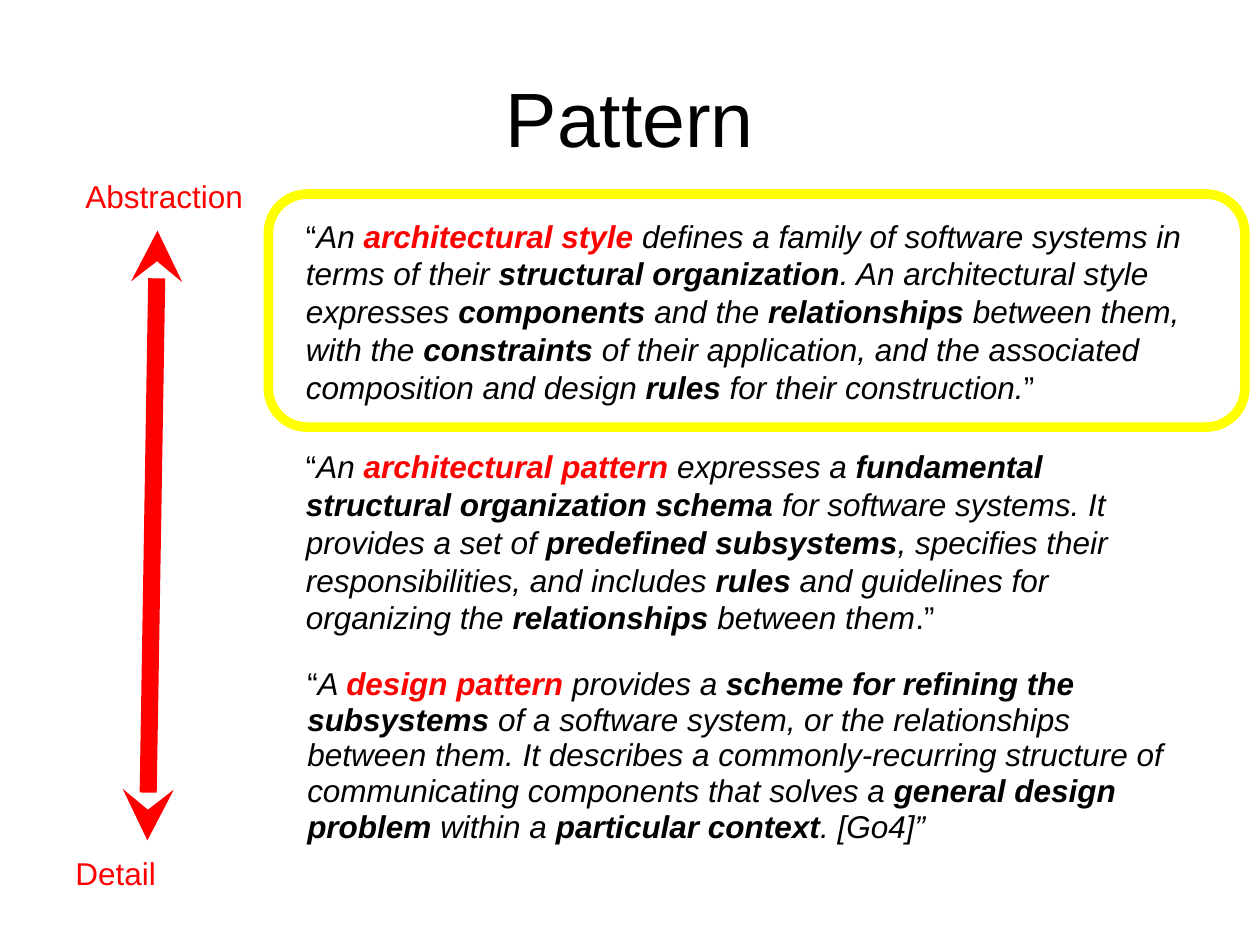
from lxml.etree import SubElement
from pptx import Presentation
from pptx.dml.color import RGBColor
from pptx.enum.shapes import MSO_CONNECTOR, MSO_SHAPE
from pptx.enum.text import MSO_ANCHOR, PP_ALIGN
from pptx.oxml.ns import qn
from pptx.util import Inches, Pt

COLORS = {"ink": "000000", "accent": "FF0000", "highlight": "FFFF00"}
FONT = "Arial"

STYLE = (
    "An |architectural style |defines a family of software systems in terms of their "
    "|structural organization|. An architectural style expresses |components| and the "
    "|relationships| between them, with the |constraints| of their application, and the "
    "associated composition and design |rules| for their construction."
)
ARCHITECTURE = (
    "An |architectural pattern |expresses a |fundamental structural organization schema| "
    "for software systems. It provides a set of |predefined subsystems|, specifies their "
    "responsibilities, and includes |rules| and guidelines for organizing the "
    "|relationships| between them"
)
DESIGN = (
    "A |design pattern |provides a |scheme for refining the subsystems| of a software "
    "system, or the relationships between them. It describes a commonly-recurring "
    "structure of communicating components that solves a |general design problem| within "
    "a |particular context|. [Go4]”"
)


def color(name):
    """Return the named colour of the palette."""
    return RGBColor.from_string(COLORS[name])


def add_span(para, text, size=18, ink="ink", bold=False, italic=False):
    """Append one formatted span to a paragraph."""
    span = para.add_run()
    span.text = text
    span.font.name = FONT
    span.font.size = Pt(size)
    span.font.bold = bold
    span.font.italic = italic
    span.font.color.rgb = color(ink)


def add_text(page, box, spans, align=PP_ALIGN.LEFT, anchor=MSO_ANCHOR.TOP, spacing=None):
    """Place one paragraph made of (text, format) spans in a box."""
    frame = page.shapes.add_textbox(*map(Inches, box)).text_frame
    frame.word_wrap = True
    frame.vertical_anchor = anchor
    para = frame.paragraphs[0]
    para.alignment = align
    if spacing:
        para.line_spacing = spacing
    for text, look in spans:
        add_span(para, text, **look)


def add_title(page, box, text):
    """Place the centred slide title."""
    add_text(page, box, [(text, {"size": 44})], PP_ALIGN.CENTER, MSO_ANCHOR.MIDDLE)


def add_definition(page, box, text, closing="", spacing=None):
    """Place a quoted definition whose odd segments are bold, the first one red."""
    spans = [("“", {})]
    for index, segment in enumerate(text.split("|")):
        ink = "accent" if index == 1 else "ink"
        spans.append((segment, {"ink": ink, "bold": index % 2 == 1, "italic": True}))
    if closing:
        spans.append((closing, {}))
    add_text(page, box, spans, spacing=spacing)


def add_scale(page, box, top_label, bottom_label):
    """Draw the double arrow between its two end labels."""
    left, top, width, height = box
    label = {"ink": "accent"}
    add_text(page, (left + 0.08, top, width - 0.08, 0.4), [(top_label, label)])
    add_text(page, (left, top + height - 0.71, width, 0.71), [(bottom_label, label)])
    ends = (left + 0.67, top + height - 0.77, left + 0.75, top + 0.47)
    arrow = page.shapes.add_connector(MSO_CONNECTOR.STRAIGHT, *map(Inches, ends))
    arrow.line.color.rgb = color("accent")
    arrow.line.width = Pt(9.75)
    for end in ("a:headEnd", "a:tailEnd"):
        SubElement(arrow.line._get_or_add_ln(), qn(end), type="stealth")
    SubElement(arrow._element.spPr, qn("a:effectLst"))


def add_highlight(page, box):
    """Draw the rounded outline around the definition in focus."""
    outline = page.shapes.add_shape(MSO_SHAPE.ROUNDED_RECTANGLE, *map(Inches, box))
    outline.shadow.inherit = False
    outline.fill.background()
    outline.line.color.rgb = color("highlight")
    outline.line.width = Pt(5.5)


def main():
    """Build the slide and save the deck."""
    deck = Presentation()
    deck.slide_width, deck.slide_height = Inches(10), Inches(7.5)
    page = deck.slides.add_slide(deck.slide_layouts[6])
    add_title(page, (0.5, 0.3, 9, 1.25), "Pattern")
    add_scale(page, (0.5, 1.36, 1.63, 6.08), "Abstraction", "Detail")
    add_definition(page, (2.33, 1.67, 7.25, 1.62), STYLE, closing="”")
    add_definition(page, (2.33, 3.5, 7.08, 1.65), ARCHITECTURE, closing=".”")
    add_definition(page, (2.34, 5.24, 7.25, 1.54), DESIGN, spacing=0.95)
    add_highlight(page, (2.13, 1.54, 7.75, 1.85))
    deck.save("out.pptx")


if __name__ == "__main__":
    main()
